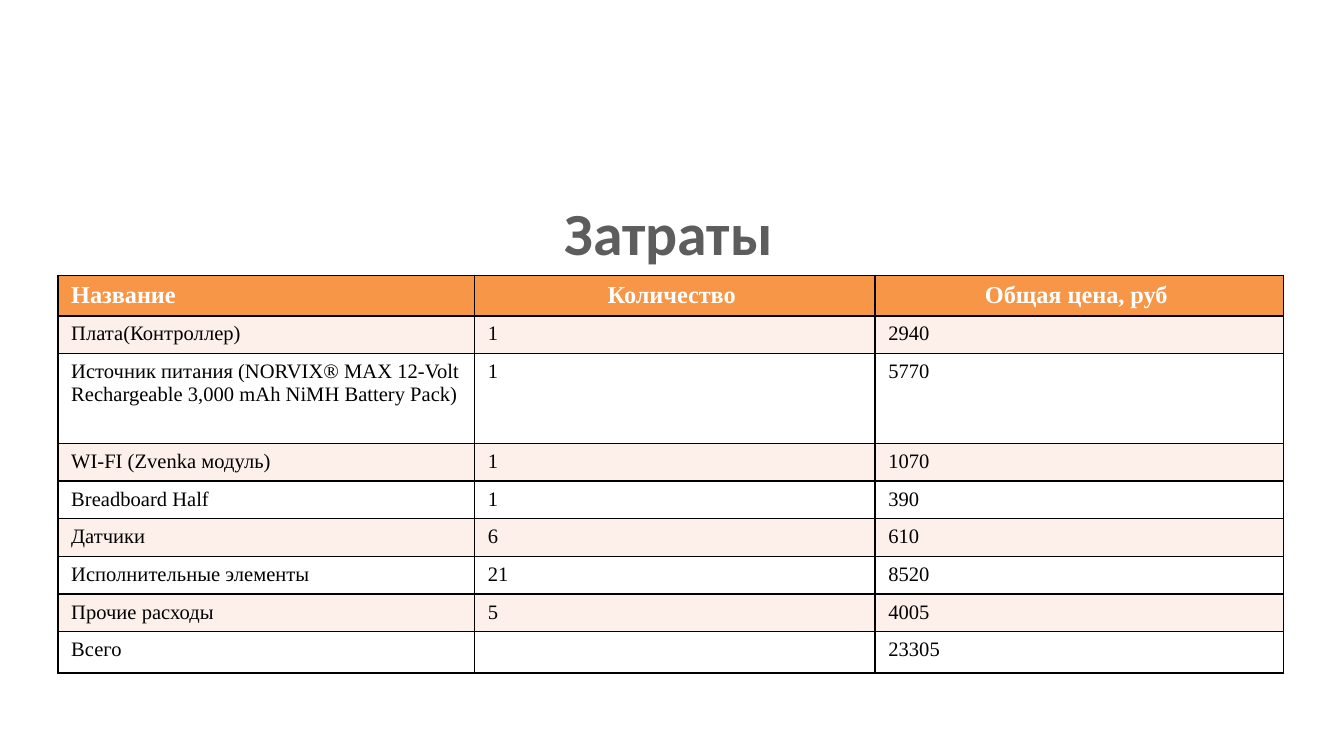
from lxml.etree import SubElement
from pptx import Presentation
from pptx.dml.color import RGBColor
from pptx.enum.text import MSO_ANCHOR as Anchor, MSO_AUTO_SIZE as AutoSize, PP_ALIGN as Align
from pptx.oxml.ns import qn
from pptx.util import Inches, Pt

WHITE = RGBColor(0xFF, 0xFF, 0xFF)
BLACK = RGBColor(0x00, 0x00, 0x00)
GRAY = RGBColor(0x5D, 0x5D, 0x5D)
ORANGE = RGBColor(0xF7, 0x96, 0x46)
PEACH = RGBColor(0xFD, 0xEF, 0xE9)

COSTS = [
    ("Название ", "Количество ", "Общая цена, руб "),
    ("Плата(Контроллер)", "1", "2940"),
    ("Источник питания (NORVIX® MAX 12-Volt Rechargeable 3,000 mAh NiMH Battery Pack)", "1", "5770"),
    ("WI-FI (Zvenka модуль)", "1", "1070"),
    ("Breadboard Half", "1", "390"),
    ("Датчики", "6", "610"),
    ("Исполнительные элементы", "21", "8520"),
    ("Прочие расходы", "5", "4005"),
    ("Всего", "", "23305"),
]
COLUMN_WIDTHS = [3.1, 2.98, 3.04]
ROW_HEIGHTS = [0.3, 0.28, 0.67] + [0.28] * 5 + [0.31]


class CostSlide:
    title_font = "Calibri"
    table_font = "Times New Roman"

    def __init__(self, deck):
        self.page = deck.slides.add_slide(deck.slide_layouts[5])

    def style(self, para, font, size, color, bold):
        for span in para.runs:
            span.font.name = font
            span.font.size = Pt(size)
            span.font.bold = bold
            span.font.color.rgb = color

    def title(self, text, left, top, width, height):
        box = self.page.shapes.title
        box.left, box.top = Inches(left), Inches(top)
        box.width, box.height = Inches(width), Inches(height)
        frame = box.text_frame
        frame.text = text
        frame.word_wrap = False
        frame.auto_size = AutoSize.NONE
        frame.vertical_anchor = Anchor.MIDDLE
        para = frame.paragraphs[0]
        para.alignment = Align.CENTER
        self.style(para, self.title_font, 32, GRAY, True)

    def border(self, cell):
        properties = cell._tc.get_or_add_tcPr()
        for side in ("lnL", "lnR", "lnT", "lnB"):
            line = SubElement(properties, qn(f"a:{side}"), w=str(Pt(1)))
            fill = SubElement(line, qn("a:solidFill"))
            SubElement(fill, qn("a:srgbClr"), val=str(BLACK))

    def cell(self, cell, text, row, column):
        header = row == 0
        size = 13 if header else 11
        self.border(cell)
        cell.fill.solid()
        cell.fill.fore_color.rgb = ORANGE if header else PEACH if row % 2 else WHITE
        para = cell.text_frame.paragraphs[0]
        if not text:
            SubElement(para._p, qn("a:endParaRPr"), sz=str(size * 100))
            return
        para.text = text
        para.alignment = Align.CENTER if header and column else Align.LEFT
        self.style(para, self.table_font, size, WHITE if header else BLACK, header)

    def table(self, rows, left, top, widths, heights):
        frame = self.page.shapes.add_table(
            len(heights), len(widths), Inches(left), Inches(top),
            Inches(sum(widths)), Inches(sum(heights)))
        table = frame.table
        for column, width in zip(table.columns, widths):
            column.width = Inches(width)
        for row, height in zip(table.rows, heights):
            row.height = Inches(height)
        for row, texts in enumerate(rows):
            for column, text in enumerate(texts):
                self.cell(table.cell(row, column), text, row, column)


def main():
    deck = Presentation()
    deck.slide_width, deck.slide_height = Inches(10), Inches(10 * 9 / 16)
    slide = CostSlide(deck)
    slide.title("Затраты", 4.07, 1.38, 1.81, 0.68)
    slide.table(COSTS, 0.43, 2.05, COLUMN_WIDTHS, ROW_HEIGHTS)
    deck.save("out.pptx")


if __name__ == "__main__":
    main()
